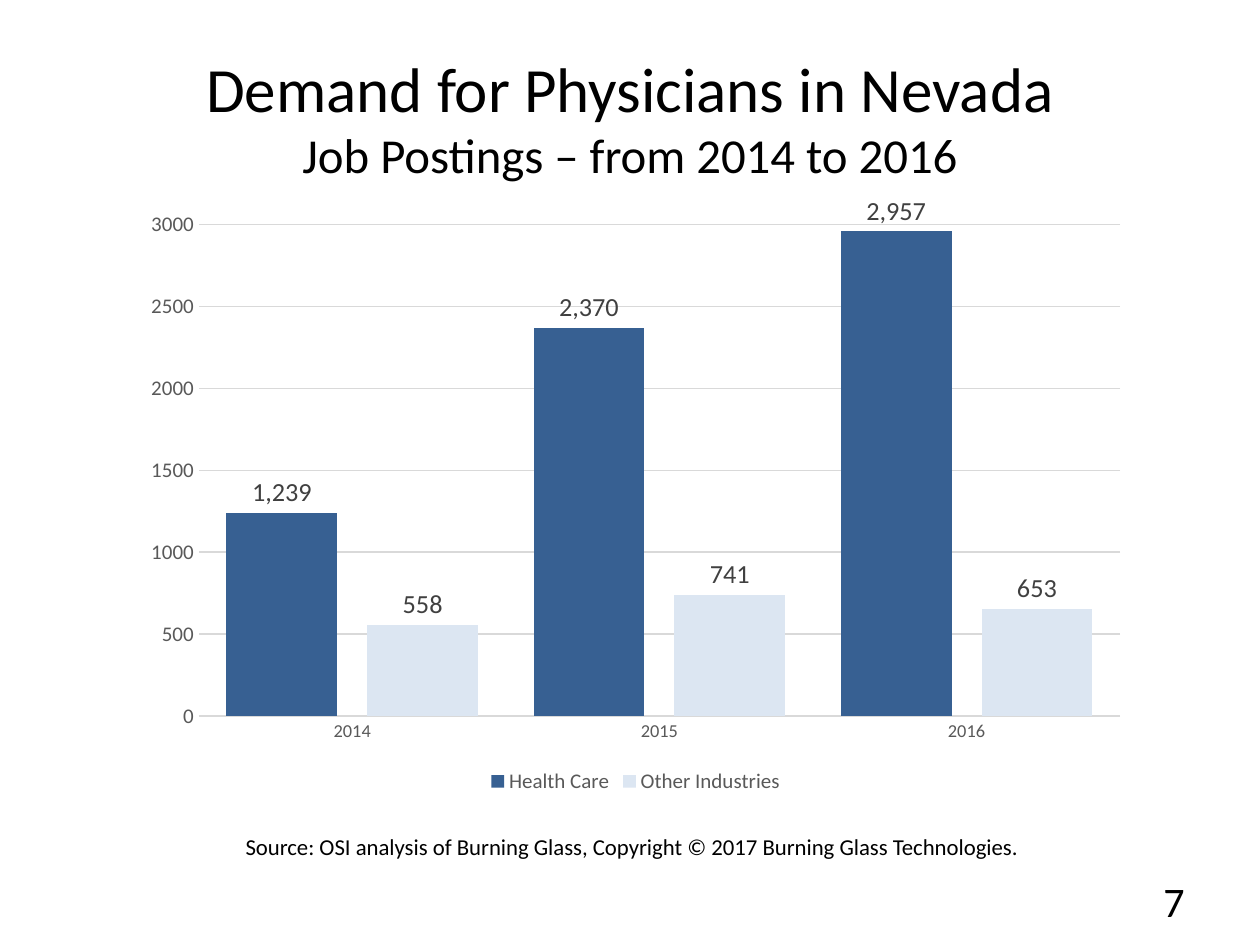
from dataclasses import dataclass

from pptx import Presentation
from pptx.chart.data import CategoryChartData
from pptx.dml.color import RGBColor
from pptx.enum.chart import XL_CHART_TYPE, XL_LABEL_POSITION, XL_LEGEND_POSITION, XL_TICK_MARK
from pptx.enum.text import MSO_ANCHOR, MSO_AUTO_SIZE, PP_ALIGN
from pptx.util import Inches, Pt

FONT = "Calibri"
BLACK, GREY, DARK_GREY, GRID = "000000", "595959", "404040", "D9D9D9"


@dataclass
class Series:
    name: str
    values: tuple[int, ...]
    color: str


@dataclass
class Caption:
    text: str
    box: tuple[float, float, float, float]
    size: float
    align: PP_ALIGN
    anchor: MSO_ANCHOR
    wrap: bool


YEARS = ("2014", "2015", "2016")
POSTINGS = (
    Series("Health Care", (1239, 2370, 2957), "376092"),
    Series("Other Industries", (558, 741, 653), "DCE6F2"),
)
CAPTIONS = (
    Caption("Source: OSI analysis of Burning Glass, Copyright © 2017 Burning Glass Technologies.",
            (1.79, 6.56, 6.44, 0.32), 13, PP_ALIGN.CENTER, MSO_ANCHOR.TOP, False),
    Caption("7", (7.17, 6.95, 2.33, 0.4), 24, PP_ALIGN.RIGHT, MSO_ANCHOR.MIDDLE, True),
)


def rgb(color: str) -> RGBColor:
    return RGBColor.from_string(color)


def style_font(font, size: float, color: str) -> None:
    font.name = FONT
    font.size = Pt(size)
    font.color.rgb = rgb(color)


def style_line(line, color: str) -> None:
    line.color.rgb = rgb(color)
    line.width = Pt(0.75)


def add_run(p, text: str, size: float) -> None:
    r = p.add_run()
    r.text = text
    style_font(r.font, size, BLACK)


def fill_title(sp) -> None:
    sp.left, sp.top, sp.width, sp.height = map(Inches, (0.5, 0.3, 9, 1.25))
    tf = sp.text_frame
    tf.auto_size = MSO_AUTO_SIZE.NONE
    tf.vertical_anchor = MSO_ANCHOR.MIDDLE
    p = tf.paragraphs[0]
    p.alignment = PP_ALIGN.CENTER
    add_run(p, "Demand for Physicians in Nevada", 36)
    p.add_line_break()
    add_run(p, "Job Postings – from 2014 to 2016", 27.9)


def add_caption(s, caption: Caption) -> None:
    tf = s.shapes.add_textbox(*map(Inches, caption.box)).text_frame
    tf.word_wrap = caption.wrap
    tf.vertical_anchor = caption.anchor
    p = tf.paragraphs[0]
    p.alignment = caption.align
    add_run(p, caption.text, caption.size)


def style_axes(chart) -> None:
    for axis, size in ((chart.category_axis, 10.5), (chart.value_axis, 12)):
        axis.major_tick_mark = axis.minor_tick_mark = XL_TICK_MARK.NONE
        style_font(axis.tick_labels.font, size, GREY)
    style_line(chart.category_axis.format.line, GRID)
    values = chart.value_axis
    values.minimum_scale, values.maximum_scale, values.major_unit = 0, 3000, 500
    values.format.line.fill.background()
    style_line(values.major_gridlines.format.line, GRID)


def add_postings_chart(s) -> None:
    data = CategoryChartData()
    data.categories = YEARS
    for series in POSTINGS:
        data.add_series(series.name, series.values)
    box = map(Inches, (1.04, 1.55, 8.01, 4.79))
    chart = s.shapes.add_chart(XL_CHART_TYPE.COLUMN_CLUSTERED, *box, data).chart
    style_font(chart.font, 12, BLACK)
    chart.has_title = False
    style_axes(chart)

    chart.has_legend = True
    chart.legend.position = XL_LEGEND_POSITION.BOTTOM
    chart.legend.include_in_layout = False
    style_font(chart.legend.font, 12, GREY)

    plot = chart.plots[0]
    plot.gap_width, plot.overlap = 50, -27
    plot.vary_by_categories = False
    for bars, series in zip(plot.series, POSTINGS):
        bars.format.fill.solid()
        bars.format.fill.fore_color.rgb = rgb(series.color)
        labels = bars.data_labels
        labels.show_value = True
        labels.position = XL_LABEL_POSITION.OUTSIDE_END
        labels.number_format = "#,##0"
        labels.number_format_is_linked = False
        style_font(labels.font, 15, DARK_GREY)


def main() -> None:
    """Build the slide on demand for physicians in Nevada."""
    prs = Presentation()
    prs.slide_width, prs.slide_height = Inches(10), Inches(7.5)
    s = prs.slides.add_slide(prs.slide_layouts[5])
    fill_title(s.shapes.title)
    add_postings_chart(s)
    for caption in CAPTIONS:
        add_caption(s, caption)
    prs.save("out.pptx")


if __name__ == "__main__":
    main()
